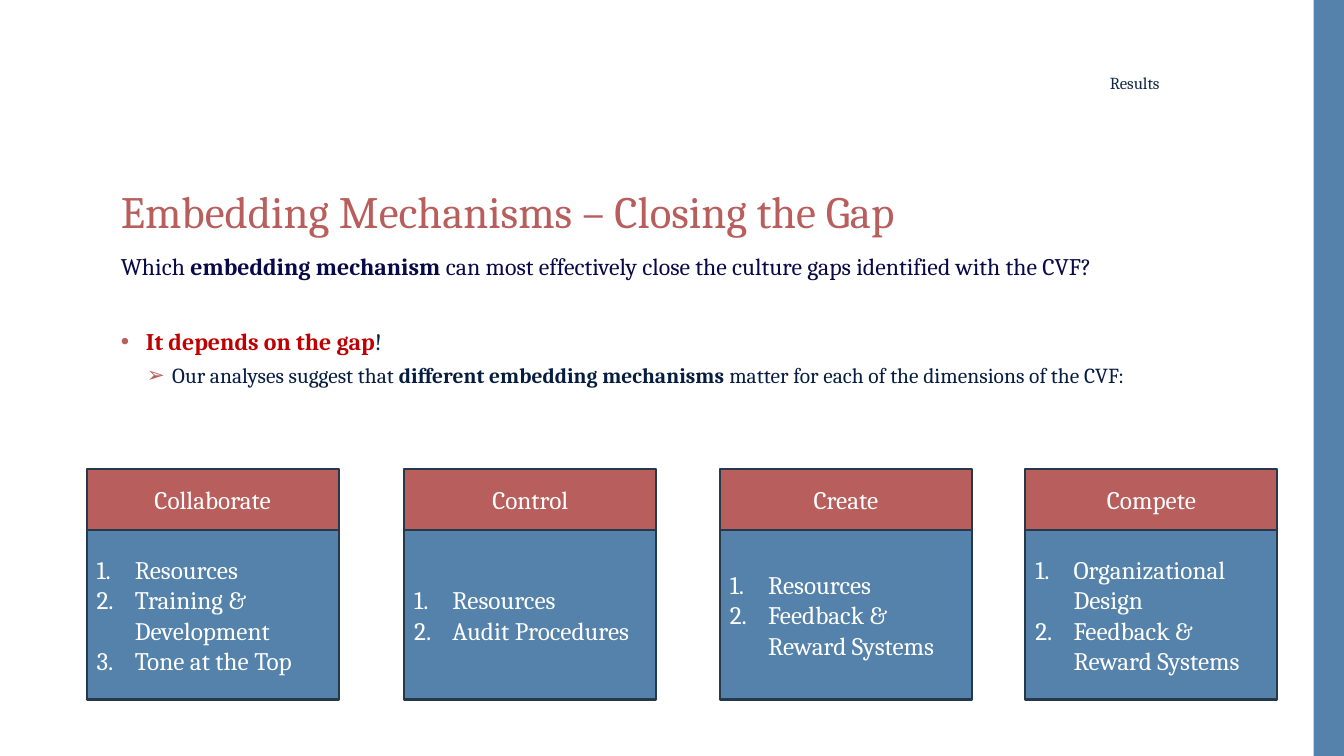
from dataclasses import dataclass

import pptx
import pptx.dml.color
import pptx.enum.shapes
import pptx.enum.text
import pptx.oxml.ns
import pptx.util
from lxml import etree

Inches, Pt = pptx.util.Inches, pptx.util.Pt
ALIGN = pptx.enum.text.PP_ALIGN
ANCHOR = pptx.enum.text.MSO_ANCHOR


@dataclass(frozen=True)
class Theme:
    font: str = "Cambria"
    red: str = "B85E5C"
    blue: str = "5482AB"
    outline: str = "25394B"
    question: str = "09094A"
    stress: str = "C00000"
    body: str = "061D41"
    label: str = "0E2841"
    white: str = "FFFFFF"
    title_size: float = 32
    body_size: float = 17
    sub_size: float = 15.3
    label_size: float = 12
    box_size: float = 18


T = Theme()

# Left edge, heading and ranked mechanisms of each CVF dimension
DIMENSIONS = [
    (0.86, "Collaborate", ["Resources", "Training & Development", "Tone at the Top"]),
    (4.01, "Control", ["Resources", "Audit Procedures"]),
    (7.14, "Create", ["Resources", "Feedback & Reward Systems"]),
    (10.17, "Compete", ["Organizational Design", "Feedback & Reward Systems"]),
]
BOX_TOP, BOX_WIDTH, HEAD_HEIGHT, LIST_HEIGHT = 4.65, 2.5, 0.61, 1.68


def rgb(value):
    return pptx.dml.color.RGBColor.from_string(value)


def add_run(p, text, size, color, bold=False):
    r = p.add_run()
    r.text = text
    for name, value in {"name": T.font, "size": Pt(size), "bold": bold}.items():
        setattr(r.font, name, value)
    r.font.color.rgb = rgb(color)


def format_paragraph(p, **formats):
    for name, value in formats.items():
        setattr(p, name, value)


def add_marker(p, margin, hanging, char=None, color=None):
    """Give a paragraph a hanging bullet, or a number if no char is given."""
    pPr = p._p.get_or_add_pPr()
    pPr.set("marL", str(Inches(margin)))
    pPr.set("indent", str(-Inches(hanging)))
    qn = pptx.oxml.ns.qn
    if color:
        clr = etree.SubElement(pPr, qn("a:buClr"))
        etree.SubElement(clr, qn("a:srgbClr"), val=color)
    if char:
        etree.SubElement(pPr, qn("a:buFont"), typeface="Arial")
        etree.SubElement(pPr, qn("a:buChar"), char=char)
    else:
        etree.SubElement(pPr, qn("a:buFont"), typeface="+mj-lt")
        etree.SubElement(pPr, qn("a:buAutoNum"), type="arabicPeriod")


def add_text_box(s, left, top, width, height, anchor=ANCHOR.TOP):
    tf = s.shapes.add_textbox(Inches(left), Inches(top), Inches(width), Inches(height)).text_frame
    tf.word_wrap = True
    tf.vertical_anchor = anchor
    return tf


def add_rect(s, left, top, width, height, fill, line=None):
    sp = s.shapes.add_shape(
        pptx.enum.shapes.MSO_SHAPE.RECTANGLE,
        Inches(left), Inches(top), Inches(width), Inches(height))
    sp.shadow.inherit = False
    sp.fill.solid()
    sp.fill.fore_color.rgb = rgb(fill)
    if line:
        sp.line.color.rgb = rgb(line)
        sp.line.width = Pt(1.5)
    else:
        sp.line.fill.background()
    tf = sp.text_frame
    tf.word_wrap = True
    tf.vertical_anchor = ANCHOR.MIDDLE
    return tf


def add_body(s):
    tf = add_text_box(s, 1.1, 2.39, 11.67, 1.99)
    # Question
    p = tf.paragraphs[0]
    format_paragraph(p, line_spacing=1.2)
    add_run(p, "Which ", T.body_size, T.question)
    add_run(p, "embedding mechanism ", T.body_size, T.question, True)
    add_run(p, "can most effectively close the culture gaps identified with the CVF?",
            T.body_size, T.question)
    # Answer
    p = tf.add_paragraph()
    add_marker(p, 0.25, 0.25, "•", T.red)
    format_paragraph(p, line_spacing=1.2, space_before=Pt(29))
    add_run(p, "It depends on the gap", T.body_size, T.stress, True)
    add_run(p, "!", T.body_size, T.body)
    # Explanation
    p = tf.add_paragraph()
    add_marker(p, 0.51, 0.25, "➢", T.red)
    format_paragraph(p, level=1, line_spacing=1.2, space_before=Pt(1.5))
    add_run(p, "Our analyses suggest that ", T.sub_size, T.body)
    add_run(p, "different embedding mechanisms", T.sub_size, T.body, True)
    add_run(p, " matter for each of the dimensions of the CVF:", T.sub_size, T.body)


def add_dimension(s, left, heading, mechanisms):
    tf = add_rect(s, left, BOX_TOP, BOX_WIDTH, HEAD_HEIGHT, T.red, T.outline)
    p = tf.paragraphs[0]
    format_paragraph(p, alignment=ALIGN.CENTER)
    add_run(p, heading, T.box_size, T.white)

    tf = add_rect(s, left, BOX_TOP + HEAD_HEIGHT, BOX_WIDTH, LIST_HEIGHT, T.blue, T.outline)
    for i, mechanism in enumerate(mechanisms):
        p = tf.add_paragraph() if i else tf.paragraphs[0]
        add_marker(p, 0.38, 0.38)
        format_paragraph(p, alignment=ALIGN.LEFT)
        add_run(p, mechanism, T.box_size, T.white)


def main():
    prs = pptx.Presentation()
    prs.slide_width, prs.slide_height = Inches(13.33), Inches(7.5)
    s = prs.slides.add_slide(prs.slide_layouts[6])

    # Side band
    add_rect(s, 13.03, 0, 0.3, 7.5, T.blue)

    # Title
    p = add_text_box(s, 1.1, 1.83, 11.18, 1.02).paragraphs[0]
    format_paragraph(p, line_spacing=0.9)
    add_run(p, "Embedding Mechanisms – Closing the Gap", T.title_size, T.red)

    add_body(s)

    # Section label
    p = add_text_box(s, 4.93, 0.62, 6.67, 0.4, ANCHOR.MIDDLE).paragraphs[0]
    format_paragraph(p, alignment=ALIGN.RIGHT)
    add_run(p, "Results", T.label_size, T.label)

    # Culture dimensions
    for dimension in DIMENSIONS:
        add_dimension(s, *dimension)

    prs.save("out.pptx")


if __name__ == "__main__":
    main()
